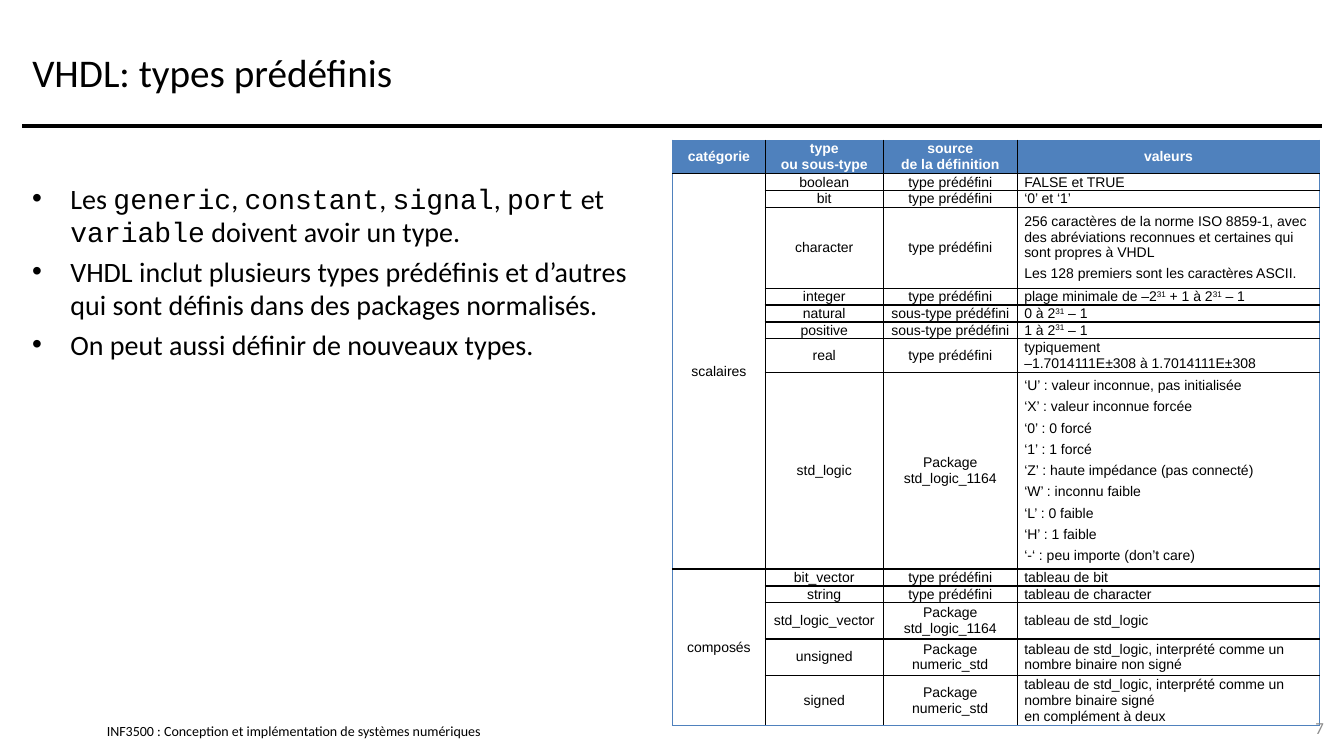
from lxml.etree import SubElement
from pptx import Presentation
from pptx.dml.color import RGBColor
from pptx.enum.shapes import MSO_CONNECTOR
from pptx.enum.text import MSO_ANCHOR, PP_ALIGN
from pptx.oxml.ns import qn
from pptx.util import Inches, Pt

HUES = {"ink": "000000", "paper": "FFFFFF", "blue": "4F81BD", "gray": "8C8C8C"}
BODY = {"name": "Calibri", "size": Pt(20)}
CELL = {"name": "Arial", "size": Pt(10), "bold": False}
HEAD = {**CELL, "bold": True}
CODE = {"name": "Courier New"}

POINTS = [
    "Les `generic`, `constant`, `signal`, `port` et `variable` doivent avoir un type.",
    "VHDL inclut plusieurs types prédéfinis et d’autres qui sont définis "
    "dans des packages normalisés.",
    "On peut aussi définir de nouveaux types.",
]

COLS = [0.92, 1.17, 1.33, 3]
LINE = 0.15
TITLES = ["catégorie", "type\nou sous-type", "source\nde la définition", "valeurs"]
BASE = "type prédéfini"
SUB = "sous-type prédéfini"
LOGIC = "Package\nstd_logic_1164"
NUM = "Package\nnumeric_std"
STATES = [
    "‘U’ : valeur inconnue, pas initialisée", "‘X’ : valeur inconnue forcée",
    "‘0’ : 0 forcé", "‘1’ : 1 forcé", "‘Z’ : haute impédance (pas connecté)",
    "‘W’ : inconnu faible", "‘L’ : 0 faible", "‘H’ : 1 faible",
    "‘-‘ : peu importe (don’t care)",
]
# Each row: height, type, source, paragraphs of values
GROUPS = {
    "scalaires": [
        (LINE, "boolean", BASE, ["FALSE et TRUE"]),
        (LINE, "bit", BASE, ["‘0’ et ‘1’"]),
        (0.8, "character", BASE, [
            "256 caractères de la norme ISO 8859-1, avec des abréviations "
            "reconnues et certaines qui sont propres à VHDL",
            "Les 128 premiers sont les caractères ASCII."]),
        (LINE, "integer", BASE, ["plage minimale de –2`31` + 1 à 2`31` – 1"]),
        (LINE, "natural", SUB, ["0 à 2`31` – 1"]),
        (LINE, "positive", SUB, ["1 à 2`31` – 1"]),
        (0.29, "real", BASE, ["typiquement\n–1.7014111E±308 à 1.7014111E±308"]),
        (1.81, "std_logic", LOGIC, STATES),
    ],
    "composés": [
        (LINE, "bit_vector", BASE, ["tableau de bit"]),
        (LINE, "string", BASE, ["tableau de character"]),
        (0.36, "std_logic_vector", LOGIC, ["tableau de std_logic"]),
        (0.36, "unsigned", NUM, [
            "tableau de std_logic, interprété comme un nombre binaire non signé"]),
        (0.44, "signed", NUM, [
            "tableau de std_logic, interprété comme un nombre binaire signé\n"
            "en complément à deux"]),
    ],
}


def style(font, look, hue="ink"):
    for key, value in look.items():
        setattr(font, key, value)
    font.color.rgb = RGBColor.from_string(HUES[hue])


def write(para, text, look, hue="ink", mark=None):
    """Fill a paragraph; parts between backticks get mark, or become superscript."""
    for i, part in enumerate(text.split("`")):
        for j, line in enumerate(part.split("\n")):
            if j:
                para.add_line_break()
            if not line:
                continue
            run = para.add_run()
            run.text = line
            style(run.font, {**look, **(mark or {})} if i % 2 else look, hue)
            if i % 2 and not mark:
                run._r.get_or_add_rPr().set("baseline", "30000")


def paras(frame, texts):
    """Yield each text with its paragraph, adding paragraphs as needed."""
    for i, text in enumerate(texts):
        yield i, (frame.add_paragraph() if i else frame.paragraphs[0]), text


def add_box(slide, area, **form):
    box = slide.shapes.add_textbox(*map(Inches, area))
    frame = box.text_frame
    for key, value in {"word_wrap": True, **form}.items():
        setattr(frame, key, value)
    return frame


def add_title(slide, text):
    title = slide.shapes.title
    title.left, title.top, title.width, title.height = map(
        Inches, (0.22, 0.17, 12.89, 1.08))
    title.text_frame.vertical_anchor = MSO_ANCHOR.MIDDLE
    para = title.text_frame.paragraphs[0]
    para.alignment = PP_ALIGN.LEFT
    write(para, text, {**BODY, "size": Pt(28)})


def add_rule(slide):
    rule = slide.shapes.add_connector(
        MSO_CONNECTOR.STRAIGHT, *map(Inches, (0.22, 1.25, 13.11, 1.25)))
    rule.line.width = Pt(3)
    rule.line.color.rgb = RGBColor.from_string(HUES["ink"])
    SubElement(rule._element.spPr, qn("a:effectLst"))


def add_points(slide):
    frame = add_box(slide, (0.22, 1.75, 6.33, 5.08))
    for i, para, text in paras(frame, POINTS):
        props = para._p.get_or_add_pPr()
        props.set("marL", str(Inches(0.38)))
        props.set("indent", str(Inches(-0.38)))
        SubElement(props, qn("a:buFont")).set("typeface", "Arial")
        SubElement(props, qn("a:buChar")).set("char", "•")
        para.space_before = Pt(4 if i else 0)
        write(para, text, BODY, mark=CODE)


def add_edge(cell, side, hue):
    edge = SubElement(cell._tc.get_or_add_tcPr(), qn(f"a:ln{side}"))
    edge.set("w", str(Pt(1)))
    fill = SubElement(edge, qn("a:solidFill"))
    SubElement(fill, qn("a:srgbClr")).set("val", HUES[hue])


def frame_cells(table):
    """Draw blue outer edges, black inner ones, and the cell fills."""
    last = len(table.rows) - 1
    for r, row in enumerate(table.rows):
        for c, cell in enumerate(row.cells):
            end = r + (cell.span_height if cell.is_merge_origin else 1) - 1
            outer = {"L": c == 0, "R": c == len(COLS) - 1,
                     "T": r == 0, "B": end == last}
            for side, out in outer.items():
                add_edge(cell, side, "blue" if out else "ink")
            cell.fill.solid()
            cell.fill.fore_color.rgb = RGBColor.from_string(
                HUES["paper" if r else "blue"])


def fill_cell(cell, texts, look=CELL, hue="ink", align=PP_ALIGN.CENTER):
    form = {"vertical_anchor": MSO_ANCHOR.MIDDLE,
            "margin_left": Inches(0.07), "margin_right": Inches(0.07),
            "margin_top": 0, "margin_bottom": 0}
    for key, value in form.items():
        setattr(cell, key, value)
    for i, para, text in paras(cell.text_frame, texts):
        para.alignment = align
        para.space_before = Pt(2 if i else 0)
        para.space_after = Pt(2)
        write(para, text, look, hue)


def add_types(slide):
    highs = [0.29] + [row[0] for rows in GROUPS.values() for row in rows]
    area = (6.67, 1.39, sum(COLS), sum(highs))
    table = slide.shapes.add_table(
        len(highs), len(COLS), *map(Inches, area)).table
    table.first_row = table.horz_banding = False
    for col, wide in zip(table.columns, COLS):
        col.width = Inches(wide)
    for row, high in zip(table.rows, highs):
        row.height = Inches(high)
    for c, text in enumerate(TITLES):
        fill_cell(table.cell(0, c), [text], HEAD, "paper")
    top = 1
    for name, rows in GROUPS.items():
        table.cell(top, 0).merge(table.cell(top + len(rows) - 1, 0))
        fill_cell(table.cell(top, 0), [name])
        for r, (_, kind, source, values) in enumerate(rows, top):
            fill_cell(table.cell(r, 1), [kind])
            fill_cell(table.cell(r, 2), [source])
            fill_cell(table.cell(r, 3), values, align=PP_ALIGN.LEFT)
        top += len(rows)
    frame_cells(table)


def add_foot(slide):
    flat = dict.fromkeys(
        ["margin_left", "margin_top", "margin_right", "margin_bottom"], 0)
    mid = {"vertical_anchor": MSO_ANCHOR.MIDDLE}
    note = add_box(slide, (1.06, 7.17, 5.11, 0.17), **mid, **flat)
    write(note.paragraphs[0],
          "INF3500 : Conception et implémentation de systèmes numériques",
          {**BODY, "size": Pt(10)})
    page = add_box(slide, (12.56, 7.02, 0.67, 0.4), **mid).paragraphs[0]
    page.alignment = PP_ALIGN.RIGHT
    write(page, "7", {**BODY, "size": Pt(12)}, "gray")


def main():
    deck = Presentation()
    deck.slide_width, deck.slide_height = Inches(13.33), Inches(7.5)
    slide = deck.slides.add_slide(deck.slide_layouts[5])
    add_title(slide, "VHDL: types prédéfinis")
    add_rule(slide)
    add_points(slide)
    add_types(slide)
    add_foot(slide)
    deck.save("out.pptx")


if __name__ == "__main__":
    main()
